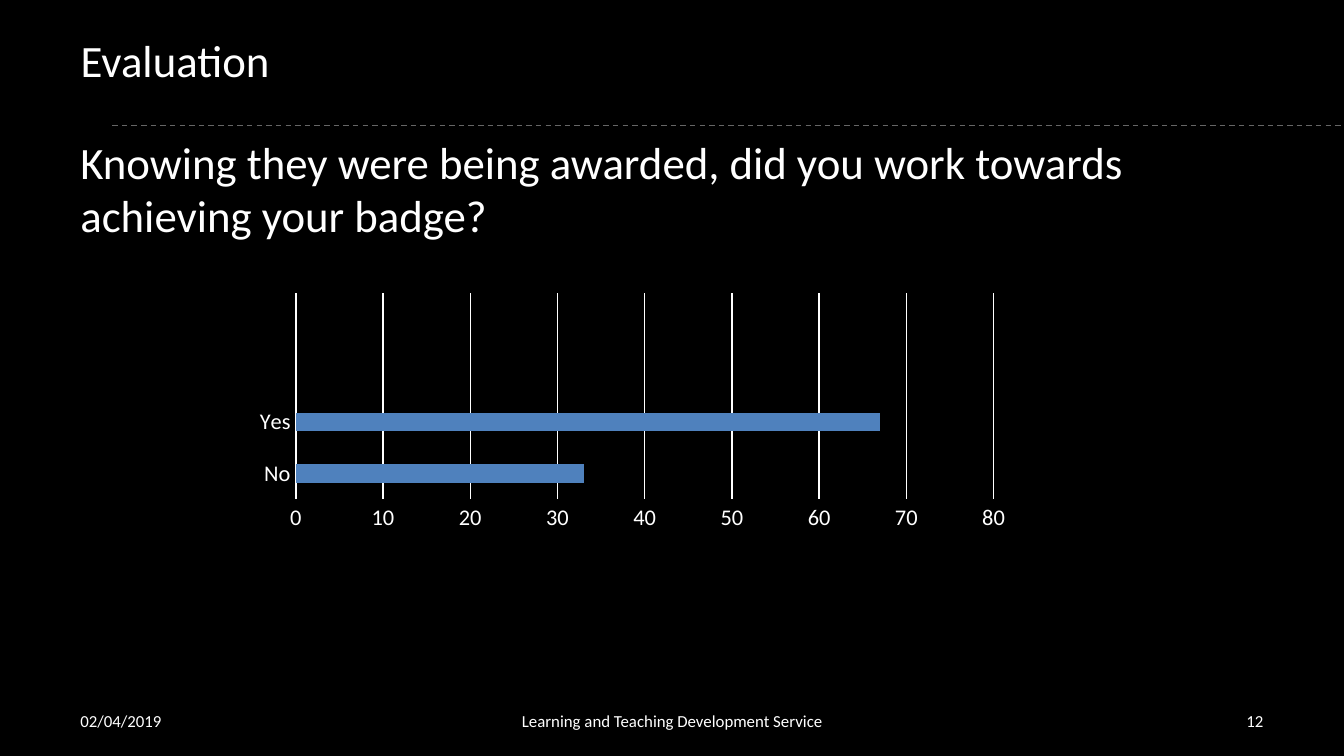
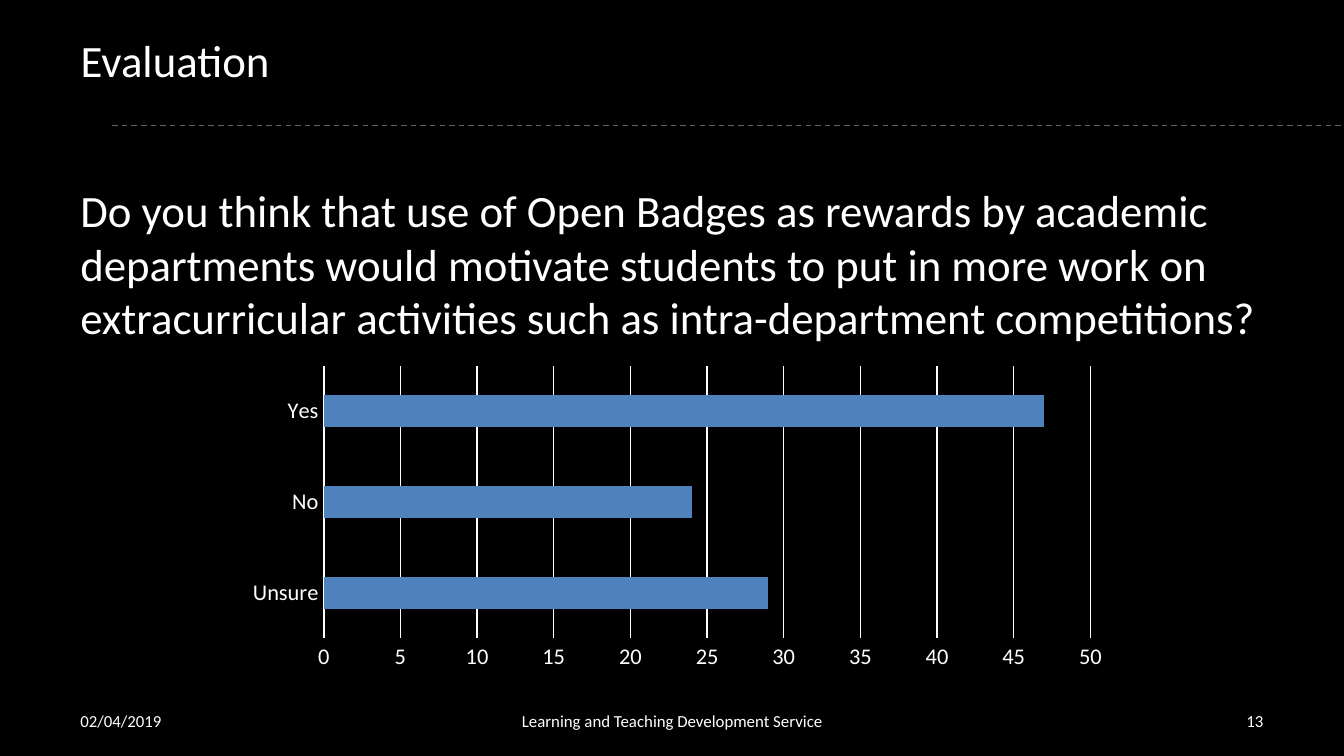
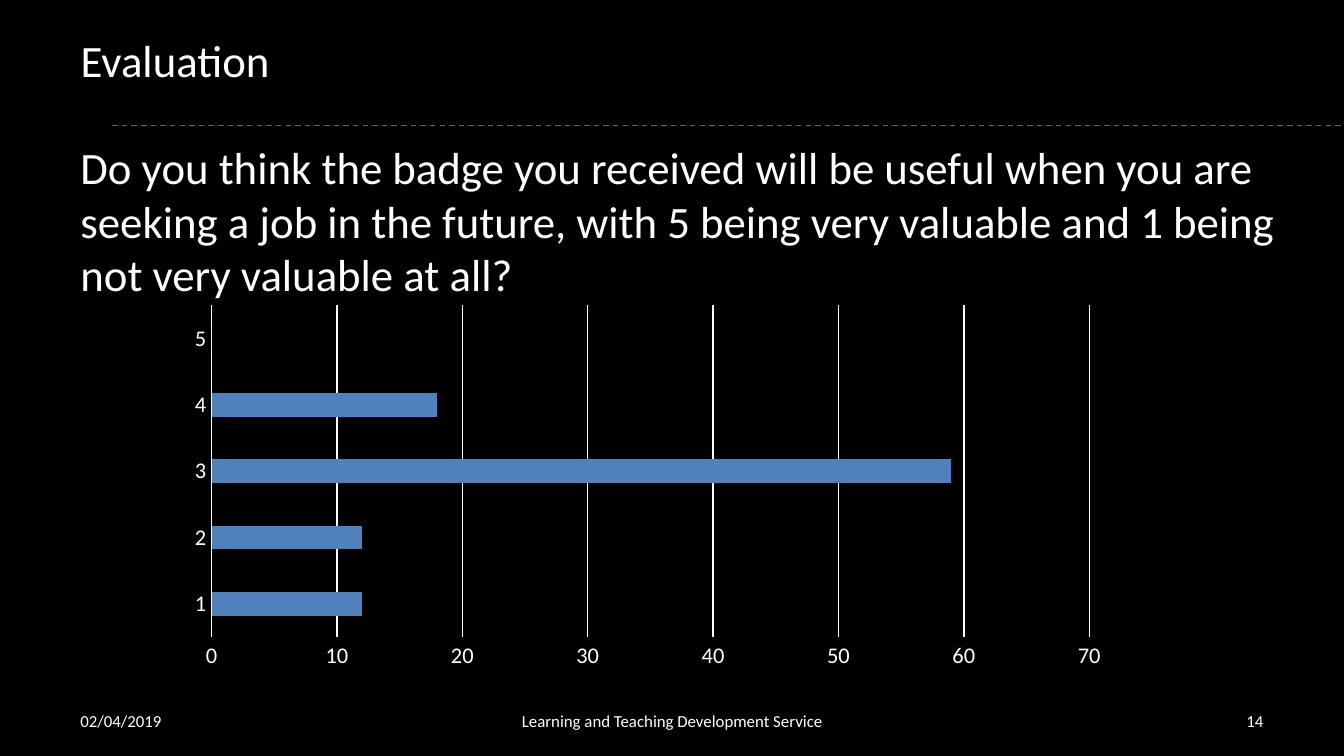
from dataclasses import dataclass

from lxml import etree
from pptx import Presentation
from pptx.chart.chart import Chart
from pptx.chart.data import CategoryChartData
from pptx.dml.color import RGBColor
from pptx.enum.chart import XL_CHART_TYPE, XL_TICK_MARK
from pptx.enum.dml import MSO_LINE_DASH_STYLE
from pptx.enum.shapes import MSO_CONNECTOR_TYPE
from pptx.enum.text import MSO_ANCHOR, MSO_AUTO_SIZE, PP_ALIGN
from pptx.oxml import parse_xml
from pptx.oxml.ns import nsdecls, qn
from pptx.slide import Slide
from pptx.text.text import Font, TextFrame
from pptx.util import Emu, Pt

BAR = XL_CHART_TYPE.BAR_CLUSTERED
NO_TICK = XL_TICK_MARK.NONE
DASH = MSO_LINE_DASH_STYLE.DASH
STRAIGHT = MSO_CONNECTOR_TYPE.STRAIGHT
TOP, MIDDLE = MSO_ANCHOR.TOP, MSO_ANCHOR.MIDDLE
LEFT, CENTER, RIGHT = PP_ALIGN.LEFT, PP_ALIGN.CENTER, PP_ALIGN.RIGHT
NO_AUTOFIT = MSO_AUTO_SIZE.NONE

EMU_PER_PX = 4572
PAGE_WIDTH, PAGE_HEIGHT = 2000, 1125
RULE_LEFT, RULE_TOP = 167, 187
TITLE_ONLY = 5
FONT = "Calibri"
COLORS = {"background": "000000", "text": "FFFFFF", "rule": "666666", "bar": "4F81BD"}
HEADING_SIZE, FOOTER_SIZE, CHART_SIZE, AXIS_SIZE = 24, 9, 10, 12
HAIRLINE = Pt(0.75)
FIRST_NUMBER = 12


@dataclass(frozen=True)
class Area:
    left: int
    top: int
    width: int
    height: int

    def emu(self) -> tuple[Emu, ...]:
        return tuple(px(v) for v in (self.left, self.top, self.width, self.height))


@dataclass(frozen=True)
class Footer:
    text: str
    area: Area
    align: PP_ALIGN


@dataclass(frozen=True)
class Question:
    text: str
    area: Area
    chart_area: Area
    answers: tuple[str, ...]
    percents: tuple[int | None, ...]
    maximum: int
    step: int
    plot: tuple[float, ...] = ()


TITLE_AREA = Area(100, 38, 1412, 100)
FOOTERS = (
    Footer("02/04/2019", Area(100, 1043, 466, 60), LEFT),
    Footer("Learning and Teaching Development Service", Area(618, 1043, 764, 60), CENTER),
    Footer("{number}", Area(1434, 1043, 466, 60), RIGHT),
)
QUESTIONS = (
    Question(
        "Knowing they were being awarded, did you work towards achieving your badge?",
        Area(100, 190, 1834, 182), Area(334, 384, 1180, 438),
        ("No", "Yes", "", ""), (33, 67, None, None), 80, 10,
        (0.09, 0.12, 0.88, 0.7),
    ),
    Question(
        "Do you think that use of Open Badges as rewards by academic departments would "
        "motivate students to put in more work on extracurricular activities such as "
        "intra-department competitions?",
        Area(100, 262, 1800, 742), Area(350, 535, 1316, 472),
        ("Unsure", "No", "Yes"), (29, 24, 47), 50, 5,
    ),
    Question(
        "Do you think the badge you received will be useful when you are seeking a job in "
        "the future, with 5 being very valuable and 1 being not very valuable at all?",
        Area(100, 198, 1862, 268), Area(262, 443, 1404, 564),
        ("1", "2", "3", "4", "5"), (12, 12, 59, 18, 0), 70, 10,
    ),
)


def px(value: int) -> Emu:
    return Emu(value * EMU_PER_PX)


def color(name: str) -> RGBColor:
    return RGBColor.from_string(COLORS[name])


def style_font(font: Font, size: int) -> None:
    font.name = FONT
    font.size = Pt(size)
    font.color.rgb = color("text")


def write(frame: TextFrame, text: str, size: int, anchor: MSO_ANCHOR, align: PP_ALIGN) -> None:
    frame.word_wrap = True
    frame.auto_size = NO_AUTOFIT
    frame.vertical_anchor = anchor
    para = frame.paragraphs[0]
    para.alignment = align
    span = para.add_run()
    span.text = text
    style_font(span.font, size)


def add_text(page: Slide, area: Area, text: str, size: int, anchor: MSO_ANCHOR, align: PP_ALIGN) -> None:
    box = page.shapes.add_textbox(*area.emu())
    write(box.text_frame, text, size, anchor, align)


def add_rule(page: Slide) -> None:
    rule = page.shapes.add_connector(
        STRAIGHT, px(RULE_LEFT), px(RULE_TOP), px(PAGE_WIDTH), px(RULE_TOP)
    )
    rule.line.color.rgb = color("rule")
    rule.line.width = HAIRLINE
    rule.line.dash_style = DASH
    etree.SubElement(rule.element.spPr, qn("a:effectLst"))


def add_frame(page: Slide, number: int) -> None:
    add_rule(page)
    title = page.shapes.title
    title.left, title.top, title.width, title.height = TITLE_AREA.emu()
    write(title.text_frame, "Evaluation", HEADING_SIZE, MIDDLE, LEFT)
    for footer in FOOTERS:
        text = footer.text.format(number=number)
        add_text(page, footer.area, text, FOOTER_SIZE, MIDDLE, footer.align)


def place_plot(chart: Chart, plot: tuple[float, ...]) -> None:
    sides = "".join(f'<c:{side} val="{value}"/>' for side, value in zip("xywh", plot))
    layout = parse_xml(
        f'<c:layout {nsdecls("c")}><c:manualLayout><c:layoutTarget val="inner"/>'
        f'<c:xMode val="edge"/><c:yMode val="edge"/>{sides}</c:manualLayout></c:layout>'
    )
    plot_area = chart.element.find(".//" + qn("c:plotArea"))
    for automatic in plot_area.findall(qn("c:layout")):
        plot_area.remove(automatic)
    plot_area.insert(0, layout)


def add_answers(page: Slide, question: Question) -> None:
    data = CategoryChartData()
    data.categories = question.answers
    data.add_series("Series 1", question.percents)
    chart = page.shapes.add_chart(BAR, *question.chart_area.emu(), data).chart
    chart.has_legend = False
    chart.has_title = False
    style_font(chart.font, CHART_SIZE)

    bars = chart.plots[0]
    bars.gap_width = 182
    bars.vary_by_categories = False
    fill = bars.series[0].format.fill
    fill.solid()
    fill.fore_color.rgb = color("bar")

    answers, percents = chart.category_axis, chart.value_axis
    for axis in (answers, percents):
        axis.major_tick_mark = axis.minor_tick_mark = NO_TICK
        style_font(axis.tick_labels.font, AXIS_SIZE)
    answers.has_major_gridlines = False
    percents.has_major_gridlines = True
    percents.minimum_scale = 0
    percents.maximum_scale = question.maximum
    percents.major_unit = question.step
    percents.format.line.fill.background()
    for line in (answers.format.line, percents.major_gridlines.format.line):
        line.color.rgb = color("text")
        line.width = HAIRLINE
    if question.plot:
        place_plot(chart, question.plot)


def main() -> None:
    deck = Presentation()
    deck.slide_width, deck.slide_height = px(PAGE_WIDTH), px(PAGE_HEIGHT)
    backdrop = deck.slide_master.background.fill
    backdrop.solid()
    backdrop.fore_color.rgb = color("background")
    for number, question in enumerate(QUESTIONS, FIRST_NUMBER):
        page = deck.slides.add_slide(deck.slide_layouts[TITLE_ONLY])
        add_frame(page, number)
        add_text(page, question.area, question.text, HEADING_SIZE, TOP, LEFT)
        add_answers(page, question)
    deck.save("out.pptx")


if __name__ == "__main__":
    main()
